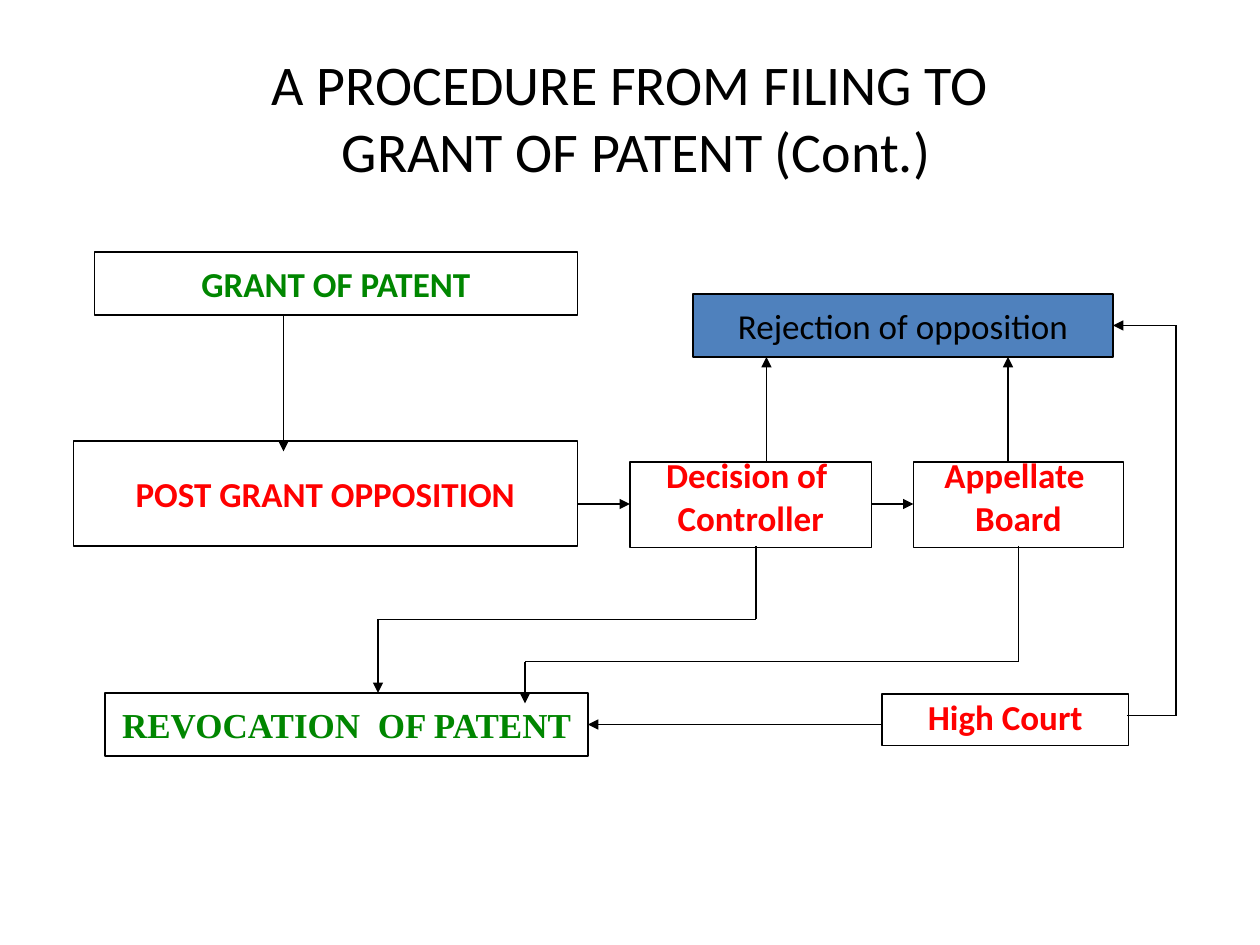
from dataclasses import dataclass
from itertools import pairwise

import lxml.etree
import pptx
import pptx.dml.color
import pptx.enum.shapes
import pptx.enum.text
import pptx.oxml.ns
import pptx.util

Pt = pptx.util.Pt
ALIGN = pptx.enum.text.PP_ALIGN
ANCHOR = pptx.enum.text.MSO_ANCHOR

BLACK = "000000"
GREEN = "008600"
RED = "FF0000"
BLUE = "4F81BD"


@dataclass(frozen=True)
class Step:
    lines: tuple[str, ...]
    left: float
    top: float
    width: float
    height: float
    color: str
    fill: str | None = None
    bold: bool = True
    font: str = "Calibri"
    spacing: float | None = None


@dataclass(frozen=True)
class Route:
    points: tuple[tuple[float, float], ...]
    weight: float = 0.75


STEPS = (
    Step(("GRANT OF PATENT",), 54, 144, 276, 36, GREEN),
    Step(("REVOCATION  OF PATENT",), 60, 396, 276, 36, GREEN, font="Times New Roman"),
    Step(("POST GRANT OPPOSITION",), 42, 252, 288, 60, RED),
    Step(("Decision of ", "Controller"), 360, 264, 138, 49, RED, spacing=0.6),
    Step(("Appellate ", "Board"), 522, 264, 120, 49, RED, spacing=0.6),
    Step(("High Court",), 504, 396.5, 141, 29.5, RED, spacing=0.9),
    Step(("Rejection of opposition",), 396, 168, 240, 36, BLACK, fill=BLUE, bold=False),
)

ROUTES = (
    Route(((162, 180), (162, 258))),
    Route(((330, 288), (360, 288))),
    Route(((498, 288), (522, 288))),
    Route(((438, 264), (438, 204))),
    Route(((576, 264), (576, 204))),
    Route(((504, 414), (336, 414)), weight=1),
    Route(((432, 312), (432, 354), (216, 354), (216, 396))),
    Route(((582, 312), (582, 378), (300, 378), (300, 402))),
    Route(((644, 409), (672, 409), (672, 186), (636, 186))),
)


def rgb(value: str) -> pptx.dml.color.RGBColor:
    return pptx.dml.color.RGBColor.from_string(value)


def apply(target, values: dict) -> None:
    for name, value in values.items():
        setattr(target, name, value)


def format_font(font, name: str, size: float, bold: bool, color: str) -> None:
    apply(font, {"name": name, "size": Pt(size), "bold": bold})
    font.color.rgb = rgb(color)


def draw_title(slide, lines: tuple[str, ...], size: int) -> None:
    heading = slide.shapes.title
    apply(heading, {"left": Pt(36), "top": Pt(21.6), "width": Pt(648), "height": Pt(90)})
    apply(heading.text_frame, {"vertical_anchor": ANCHOR.MIDDLE, "word_wrap": True})
    paragraph = heading.text_frame.paragraphs[0]
    paragraph.alignment = ALIGN.CENTER
    for index, line in enumerate(lines):
        if index:
            paragraph.add_line_break()
        run = paragraph.add_run()
        run.text = line
        format_font(run.font, "Calibri", size, False, BLACK)
    for line_break in heading.text_frame._txBody.iter(pptx.oxml.ns.qn("a:br")):
        lxml.etree.SubElement(line_break, pptx.oxml.ns.qn("a:rPr"), sz=str(size * 100))


def draw_step(slide, step: Step) -> None:
    box = slide.shapes.add_shape(
        pptx.enum.shapes.MSO_SHAPE.RECTANGLE,
        Pt(step.left), Pt(step.top), Pt(step.width), Pt(step.height),
    )
    box.shadow.inherit = False
    if step.fill:
        box.fill.solid()
        box.fill.fore_color.rgb = rgb(step.fill)
    else:
        box.fill.background()
    box.line.color.rgb = rgb(BLACK)
    box.line.width = Pt(0.75)
    frame = box.text_frame
    apply(frame, {
        "word_wrap": step.spacing is not None,
        "vertical_anchor": ANCHOR.TOP if step.spacing else ANCHOR.MIDDLE,
    })
    for index, line in enumerate(step.lines):
        paragraph = frame.add_paragraph() if index else frame.paragraphs[0]
        apply(paragraph, {"alignment": ALIGN.CENTER, "line_spacing": step.spacing})
        if index:
            paragraph.space_before = Pt(10)
        run = paragraph.add_run()
        run.text = line
        format_font(run.font, step.font, 20, step.bold, step.color)


def draw_route(slide, route: Route) -> None:
    for start, end in pairwise(route.points):
        segment = slide.shapes.add_connector(
            pptx.enum.shapes.MSO_CONNECTOR.STRAIGHT, *map(Pt, start + end)
        )
        segment.line.color.rgb = rgb(BLACK)
        segment.line.width = Pt(route.weight)
        if end == route.points[-1]:
            lxml.etree.SubElement(
                segment.line._get_or_add_ln(), pptx.oxml.ns.qn("a:tailEnd"), type="triangle"
            )
        lxml.etree.SubElement(segment._element.spPr, pptx.oxml.ns.qn("a:effectLst"))


def main() -> None:
    deck = pptx.Presentation()
    apply(deck, {"slide_width": Pt(720), "slide_height": Pt(540)})
    slide = deck.slides.add_slide(deck.slide_layouts.get_by_name("Title Only"))
    draw_title(slide, ("A PROCEDURE FROM FILING TO", " GRANT OF PATENT (Cont.)"), 32)
    for step in STEPS:
        draw_step(slide, step)
    for route in ROUTES:
        draw_route(slide, route)
    deck.save("out.pptx")


if __name__ == "__main__":
    main()
